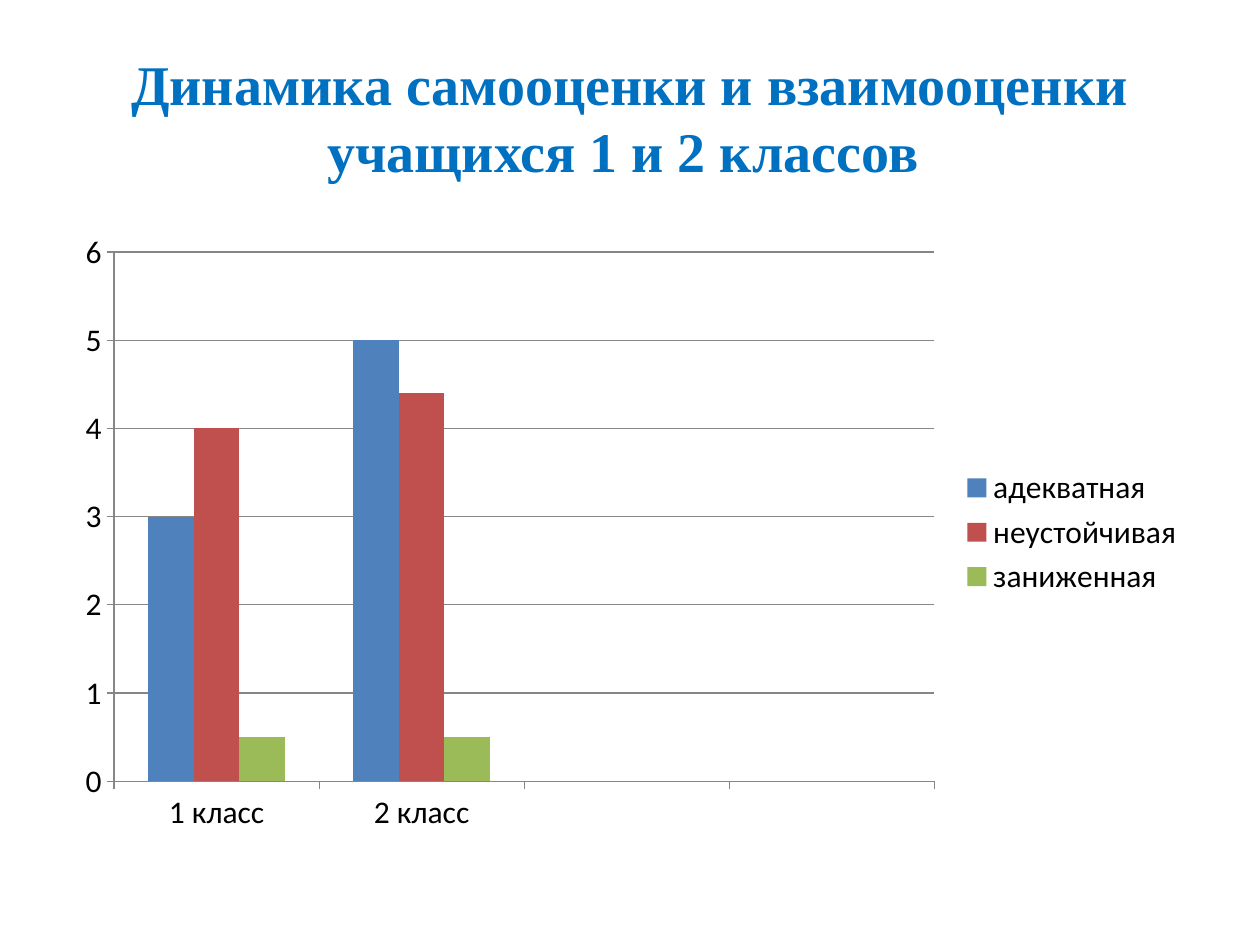
from typing import NamedTuple

from pptx import Presentation
from pptx.chart.data import CategoryChartData
from pptx.dml.color import RGBColor
from pptx.enum.chart import XL_CHART_TYPE, XL_LEGEND_POSITION, XL_TICK_MARK
from pptx.enum.text import MSO_ANCHOR, PP_ALIGN
from pptx.slide import Slide
from pptx.util import Inches, Pt

TITLE_BLUE = RGBColor(0x00, 0x70, 0xC0)
BLACK = RGBColor(0x00, 0x00, 0x00)
AXIS_GRAY = RGBColor(0x86, 0x86, 0x86)
BLUE = RGBColor(0x4F, 0x81, 0xBD)
RED = RGBColor(0xC0, 0x50, 0x4D)
GREEN = RGBColor(0x9B, 0xBB, 0x59)

MARGIN = Inches(0.5)
CONTENT_WIDTH = Inches(9)


class SelfEsteem(NamedTuple):
    level: str
    scores: tuple[float | None, ...]
    color: RGBColor


# The last two category slots are empty.
CLASSES = ("1 класс", "2 класс", "", "")
LEVELS = (
    SelfEsteem("адекватная", (3, 5, None, None), BLUE),
    SelfEsteem("неустойчивая", (4, 4.4, None, None), RED),
    SelfEsteem("заниженная", (0.5, 0.5, None, None), GREEN),
)


def add_title(slide: Slide, text: str) -> None:
    title = slide.shapes.add_textbox(MARGIN, Inches(0.3), CONTENT_WIDTH, Inches(1.25))
    frame = title.text_frame
    frame.word_wrap = True
    frame.vertical_anchor = MSO_ANCHOR.MIDDLE
    paragraph = frame.paragraphs[0]
    paragraph.alignment = PP_ALIGN.CENTER
    run = paragraph.add_run()
    run.text = text
    run.font.name = "Times New Roman"
    run.font.size = Pt(32)
    run.font.bold = True
    run.font.color.rgb = TITLE_BLUE


def add_dynamics_chart(slide: Slide) -> None:
    data = CategoryChartData()
    data.categories = CLASSES
    for item in LEVELS:
        data.add_series(item.level, item.scores)

    chart = slide.shapes.add_chart(
        XL_CHART_TYPE.COLUMN_CLUSTERED,
        MARGIN, Inches(1.75), CONTENT_WIDTH, Inches(4.95), data,
    ).chart
    chart.has_title = False
    chart.font.name = "Calibri"
    chart.font.size = Pt(18)
    chart.font.color.rgb = BLACK

    chart.has_legend = True
    chart.legend.position = XL_LEGEND_POSITION.RIGHT
    chart.legend.include_in_layout = False

    chart.value_axis.minimum_scale = 0
    chart.value_axis.maximum_scale = 6
    chart.value_axis.major_unit = 1
    chart.value_axis.has_major_gridlines = True
    gridlines = chart.value_axis.major_gridlines
    for axis in (chart.category_axis, chart.value_axis):
        axis.major_tick_mark = XL_TICK_MARK.OUTSIDE
        axis.minor_tick_mark = XL_TICK_MARK.NONE
    for part in (chart.category_axis, chart.value_axis, gridlines):
        part.format.line.color.rgb = AXIS_GRAY
        part.format.line.width = Pt(0.75)

    plot = chart.plots[0]
    plot.vary_by_categories = False
    plot.gap_width = 150
    plot.overlap = 0
    for series, item in zip(plot.series, LEVELS):
        series.format.fill.solid()
        series.format.fill.fore_color.rgb = item.color


def main() -> None:
    presentation = Presentation()
    presentation.slide_width = Inches(10)
    presentation.slide_height = Inches(7.5)
    slide = presentation.slides.add_slide(presentation.slide_layouts[6])
    add_title(slide, "Динамика самооценки и взаимооценки учащихся 1 и 2 классов ")
    add_dynamics_chart(slide)
    presentation.save("out.pptx")


if __name__ == "__main__":
    main()
